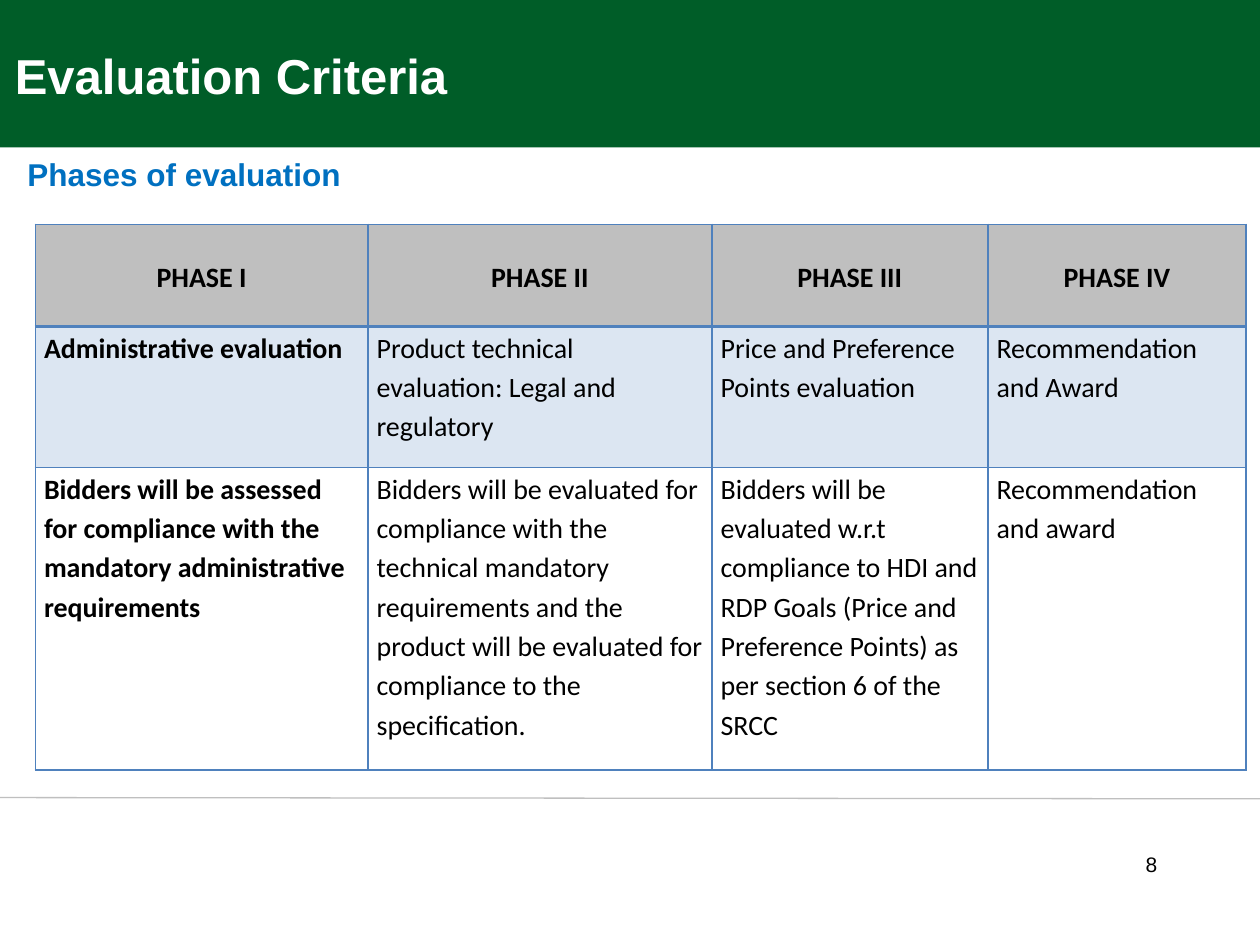
import lxml.etree
import pptx
import pptx.dml.color
import pptx.enum.shapes
import pptx.enum.text
import pptx.oxml
import pptx.oxml.ns
import pptx.util

# The slide is a grid of 100 columns by 75 rows; boxes are (column, row, columns, rows).
GRID_COLUMNS, GRID_ROWS = 100, 75
CELL = pptx.util.Inches(0.1)
COLORS = {
    "banner": "005D28",
    "title": "FFFFFF",
    "subtitle": "0070C0",
    "text": "000000",
    "rule": "BFBFBF",
    "header": "BFBFBF",
    "band": "DCE6F2",
    "border": "4F81BD",
}
ALIGN = pptx.enum.text.PP_ALIGN
ANCHOR = pptx.enum.text.MSO_ANCHOR

PHASES = [
    ["PHASE I", "PHASE II", "PHASE III", "PHASE IV"],
    [
        "Administrative evaluation",
        "Product technical evaluation: Legal and regulatory",
        "Price and Preference Points evaluation",
        "Recommendation and Award",
    ],
    [
        "Bidders will be assessed for compliance with the mandatory administrative requirements",
        "Bidders will be evaluated for compliance with the technical mandatory requirements "
        "and the product will be evaluated for compliance to the specification.",
        "Bidders will be evaluated w.r.t compliance to HDI and RDP Goals "
        "(Price and Preference Points) as per section 6 of the SRCC",
        "Recommendation and award",
    ],
]
PHASE_COLUMNS = [26.4, 27.3, 21.9, 20.5]
PHASE_ROWS = [8.1, 11.2, 24]
ROW_FILLS = ["header", "band", None]


def grid(*counts):
    return [round(count * CELL) for count in counts]


def color(name):
    return pptx.dml.color.RGBColor.from_string(COLORS[name])


def write(paragraph, text, size, ink, bold=False, font="Arial"):
    run = paragraph.add_run()
    run.text = text
    run.font.name = font
    run.font.size = pptx.util.Pt(size)
    run.font.bold = bold
    run.font.color.rgb = color(ink)


def add_label(slide, box, text, size, ink, bold=True, align=ALIGN.LEFT, anchor=ANCHOR.TOP):
    frame = slide.shapes.add_textbox(*grid(*box)).text_frame
    frame.word_wrap = True
    frame.vertical_anchor = anchor
    frame.paragraphs[0].alignment = align
    write(frame.paragraphs[0], text, size, ink, bold)


def add_banner(slide, box):
    left, top, width, height = box
    banner = slide.shapes.add_shape(pptx.enum.shapes.MSO_SHAPE.RECTANGLE, *grid(*box))
    banner.shadow.inherit = False
    banner.fill.solid()
    banner.fill.fore_color.rgb = color("banner")
    banner.line.fill.background()
    title_box = (left + 0.2, top + 1.6, 0.61 * width, height - 4.5)
    add_label(slide, title_box, "Evaluation Criteria", 28, "title", anchor=ANCHOR.BOTTOM)


def set_borders(cell, widths):
    """Draw the left, right, top and bottom borders, with widths in points."""
    properties = cell._tc.get_or_add_tcPr()
    for position, (side, width) in enumerate(zip("LRTB", widths)):
        border = pptx.oxml.parse_xml(
            f'<a:ln{side} {pptx.oxml.ns.nsdecls("a")} w="{pptx.util.Pt(width)}">'
            f'<a:solidFill><a:srgbClr val="{COLORS["border"]}"/></a:solidFill></a:ln{side}>'
        )
        properties.insert(position, border)


def fill_cell(cell, text, row, column):
    is_header = row == 0
    cell.margin_left = cell.margin_right = pptx.util.Inches(0.07)
    cell.margin_top = cell.margin_bottom = 0
    cell.vertical_anchor = ANCHOR.MIDDLE if is_header else ANCHOR.TOP
    paragraph = cell.text_frame.paragraphs[0]
    paragraph.alignment = ALIGN.CENTER if is_header else ALIGN.LEFT
    paragraph.line_spacing = 1.15
    write(paragraph, text, 16, "text", is_header or column == 0, "Calibri")
    if ROW_FILLS[row]:
        cell.fill.solid()
        cell.fill.fore_color.rgb = color(ROW_FILLS[row])
    else:
        cell.fill.background()
    set_borders(cell, (1, 1, 2 if row == 1 else 1, 2 if is_header else 1))


def add_phase_table(slide, left, top):
    box = (left, top, sum(PHASE_COLUMNS), sum(PHASE_ROWS))
    table = slide.shapes.add_table(len(PHASE_ROWS), len(PHASE_COLUMNS), *grid(*box)).table
    table.horz_banding = False
    table.first_row = False
    for column, width in zip(table.columns, grid(*PHASE_COLUMNS)):
        column.width = width
    for row, height in zip(table.rows, grid(*PHASE_ROWS)):
        row.height = height
    for row, texts in enumerate(PHASES):
        for column, text in enumerate(texts):
            fill_cell(table.cell(row, column), text, row, column)


def add_footer(slide, box):
    left, top, width, height = box
    rule = slide.shapes.add_connector(
        pptx.enum.shapes.MSO_CONNECTOR.STRAIGHT, *grid(left, top, left + width, top + 0.1)
    )
    rule.line.color.rgb = color("rule")
    rule.line.width = pptx.util.Pt(0.75)
    lxml.etree.SubElement(rule._element.spPr, pptx.oxml.ns.qn("a:effectLst"))
    number_box = (left + 41.3, top + 3.8, 0.52 * width, height - 3.8)
    add_label(slide, number_box, "8 ", 12, "text", bold=False, align=ALIGN.RIGHT)


def main():
    presentation = pptx.Presentation()
    presentation.slide_width, presentation.slide_height = grid(GRID_COLUMNS, GRID_ROWS)
    slide = presentation.slides.add_slide(presentation.slide_layouts[6])
    add_banner(slide, (0, 0, GRID_COLUMNS, 11.7))
    add_footer(slide, (0, 63.3, GRID_COLUMNS, GRID_ROWS - 63.3))
    add_label(slide, (1.2, 11.8, 97.6, 8.1), "Phases of evaluation", 18, "subtitle")
    add_phase_table(slide, 2.8, 17.8)
    presentation.save("out.pptx")


if __name__ == "__main__":
    main()
